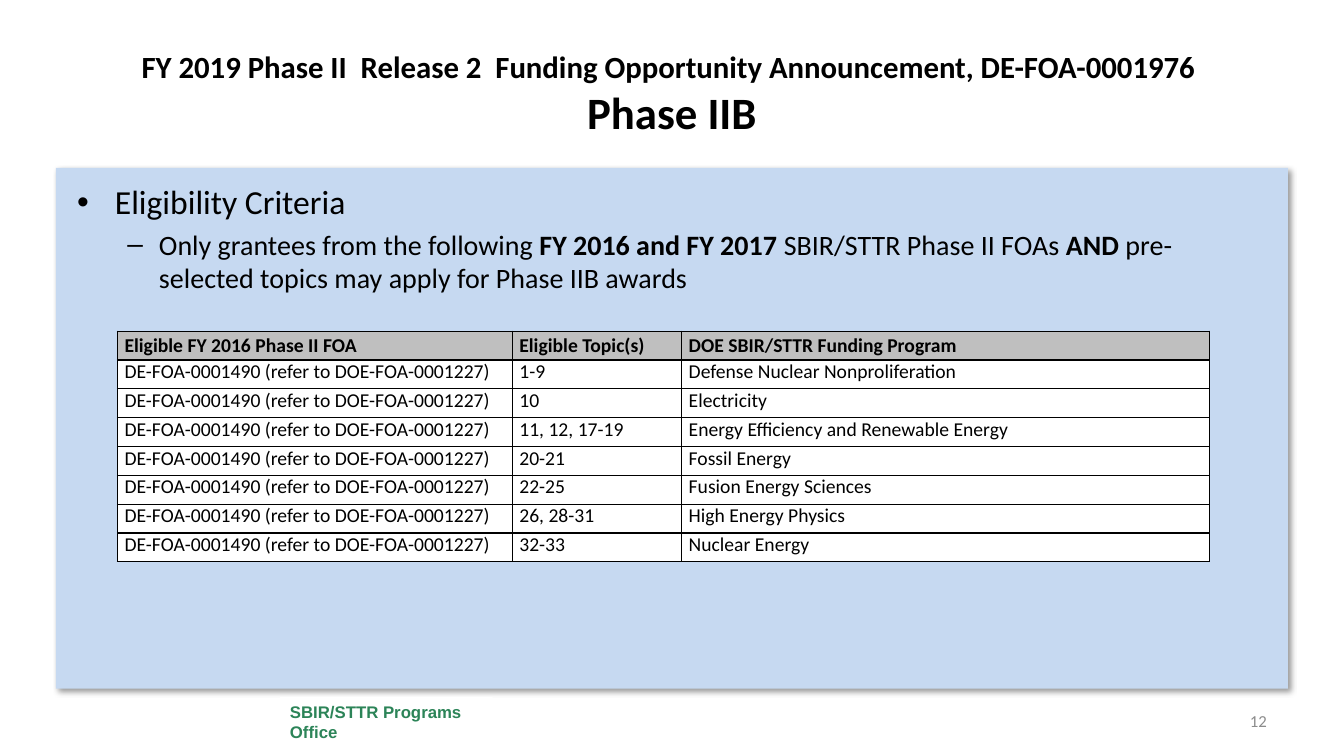
"""Build the Phase IIB eligibility slide."""
from dataclasses import dataclass

import lxml.etree
import pptx
import pptx.dml.color
import pptx.enum.shapes
import pptx.enum.text
import pptx.oxml.ns
import pptx.util

Pt = pptx.util.Pt
ALIGN = pptx.enum.text.PP_ALIGN
ANCHOR = pptx.enum.text.MSO_ANCHOR


@dataclass(frozen=True)
class Theme:
    font: str = "Calibri"
    footer_font: str = "Arial"
    black: str = "000000"
    white: str = "FFFFFF"
    panel: str = "C6D9F1"
    header: str = "BFBFBF"
    green: str = "2C8458"
    gray: str = "8C8C8C"
    title: int = 32
    subtitle: int = 22
    bullet: int = 24
    subbullet: int = 20
    cell: int = 14
    small: int = 12


def rgb(value):
    return pptx.dml.color.RGBColor.from_string(value)


def child(parent, tag, **attrs):
    e = lxml.etree.SubElement(parent, pptx.oxml.ns.qn(tag))
    for name, value in attrs.items():
        e.set(name, str(value))
    return e


class Deck:
    def __init__(self, theme):
        self.theme = theme
        self.prs = pptx.Presentation()
        self.prs.slide_width, self.prs.slide_height = Pt(960), Pt(540)
        self.s = self.prs.slides.add_slide(self.prs.slide_layouts[6])

    def style(self, p, size, color=None, bold=None, font=None):
        p.font.name = font or self.theme.font
        p.font.size = Pt(size)
        p.font.bold = bold
        p.font.color.rgb = rgb(color or self.theme.black)

    def rect(self, box, fill):
        sp = self.s.shapes.add_shape(
            pptx.enum.shapes.MSO_SHAPE.RECTANGLE, *map(Pt, box))
        sp.shadow.inherit = False
        sp.fill.solid()
        sp.fill.fore_color.rgb = rgb(fill)
        sp.line.fill.background()
        return sp

    def panel(self, box):
        sp = self.rect(box, self.theme.panel)
        effects = sp.element.spPr.find(pptx.oxml.ns.qn("a:effectLst"))
        shadow = child(effects, "a:outerShdw", blurRad=Pt(4), dist=Pt(3),
                       dir=45 * 60000, algn="tl", rotWithShape=0)
        color = child(shadow, "a:srgbClr", val=self.theme.black)
        child(color, "a:alpha", val=40000)

    def footer(self, box, text):
        tf = self.rect(box, self.theme.white).text_frame
        tf.word_wrap = True
        tf.vertical_anchor = ANCHOR.MIDDLE
        p = tf.paragraphs[0]
        p.text = text
        p.alignment = ALIGN.LEFT
        self.style(p, self.theme.small, self.theme.green, True,
                   self.theme.footer_font)

    def text_frame(self, box, anchor=ANCHOR.TOP):
        tf = self.s.shapes.add_textbox(*map(Pt, box)).text_frame
        tf.word_wrap = True
        tf.vertical_anchor = anchor
        return tf

    def title(self, box, subtitle, title):
        p = self.text_frame(box, ANCHOR.MIDDLE).paragraphs[0]
        p.alignment = ALIGN.CENTER
        self.style(p, self.theme.title, bold=True)
        r = p.add_run()
        r.text = subtitle
        r.font.size = Pt(self.theme.subtitle)
        p.add_line_break()
        r = p.add_run()
        r.text = title
        r.font.size = Pt(self.theme.title)

    def page_number(self, box, text):
        p = self.text_frame(box, ANCHOR.MIDDLE).paragraphs[0]
        p.text = text
        p.alignment = ALIGN.RIGHT
        self.style(p, self.theme.small, self.theme.gray)

    def bullets(self, box, items):
        tf = self.text_frame(box)
        levels = [("•", 27, 27, self.theme.bullet),
                  ("–", 58.5, 22.5, self.theme.subbullet)]
        for i, (level, runs) in enumerate(items):
            mark, left, hang, size = levels[level]
            p = tf.add_paragraph() if i else tf.paragraphs[0]
            p.level = level
            pPr = p._p.get_or_add_pPr()
            pPr.set("marL", str(Pt(left)))
            pPr.set("indent", str(-Pt(hang)))
            child(pPr, "a:buFont", typeface="Arial")
            child(pPr, "a:buChar", char=mark)
            self.style(p, size)
            if i:
                p.space_before = Pt(0.2 * size)
            for text, bold in runs:
                r = p.add_run()
                r.text = text
                r.font.bold = bold

    def table(self, left, top, widths, row_height, rows):
        table = self.s.shapes.add_table(
            len(rows), len(widths), Pt(left), Pt(top),
            Pt(sum(widths)), Pt(row_height * len(rows))).table
        table.horz_banding = False
        for column, width in zip(table.columns, widths):
            column.width = Pt(width)
        for i, values in enumerate(rows):
            table.rows[i].height = Pt(row_height)
            for j, text in enumerate(values):
                self.cell(table.cell(i, j), text, header=i == 0)

    def cell(self, cell, text, header):
        cell.margin_left = cell.margin_right = Pt(5)
        cell.margin_top = cell.margin_bottom = 0
        cell.vertical_anchor = ANCHOR.MIDDLE if header else ANCHOR.TOP
        for side in "LRTB":
            ln = child(cell._tc.get_or_add_tcPr(), f"a:ln{side}", w=Pt(1))
            child(child(ln, "a:solidFill"), "a:srgbClr", val=self.theme.black)
        cell.fill.solid()
        cell.fill.fore_color.rgb = rgb(
            self.theme.header if header else self.theme.white)
        p = cell.text_frame.paragraphs[0]
        p.text = text
        self.style(p, self.theme.cell, bold=header)


def main():
    deck = Deck(Theme())
    deck.panel((40, 120, 880, 372))
    deck.footer((200, 498, 152, 35), "SBIR/STTR Programs Office")
    deck.title(
        (48, 21.6, 864, 90),
        "FY 2019 Phase II  Release 2  Funding Opportunity Announcement, "
        "DE-FOA-0001976 ",
        "Phase IIB")
    deck.bullets((48, 126, 864, 356.4), [
        (0, [("Eligibility Criteria", False)]),
        (1, [("Only grantees from the following ", False),
             ("FY 2016 and FY 2017 ", True),
             ("SBIR/STTR Phase II FOAs ", False),
             ("AND", True),
             (" pre-selected topics may apply for Phase IIB awards", False)]),
    ])
    deck.page_number((760, 500.4, 152, 28.8), "12")
    programs = [
        ("1-9", "Defense Nuclear Nonproliferation"),
        ("10", "Electricity"),
        ("11, 12, 17-19", "Energy Efficiency and Renewable Energy"),
        ("20-21", "Fossil Energy"),
        ("22-25", "Fusion Energy Sciences"),
        ("26, 28-31", "High Energy Physics"),
        ("32-33", "Nuclear Energy"),
    ]
    header = ("Eligible FY 2016 Phase II FOA", "Eligible Topic(s)",
              "DOE SBIR/STTR Funding Program")
    foa = "DE-FOA-0001490 (refer to DOE-FOA-0001227)"
    deck.table(84, 236.6, (282, 121, 377), 20.6,
               [header] + [(foa, *program) for program in programs])
    deck.prs.save("out.pptx")


if __name__ == "__main__":
    main()
